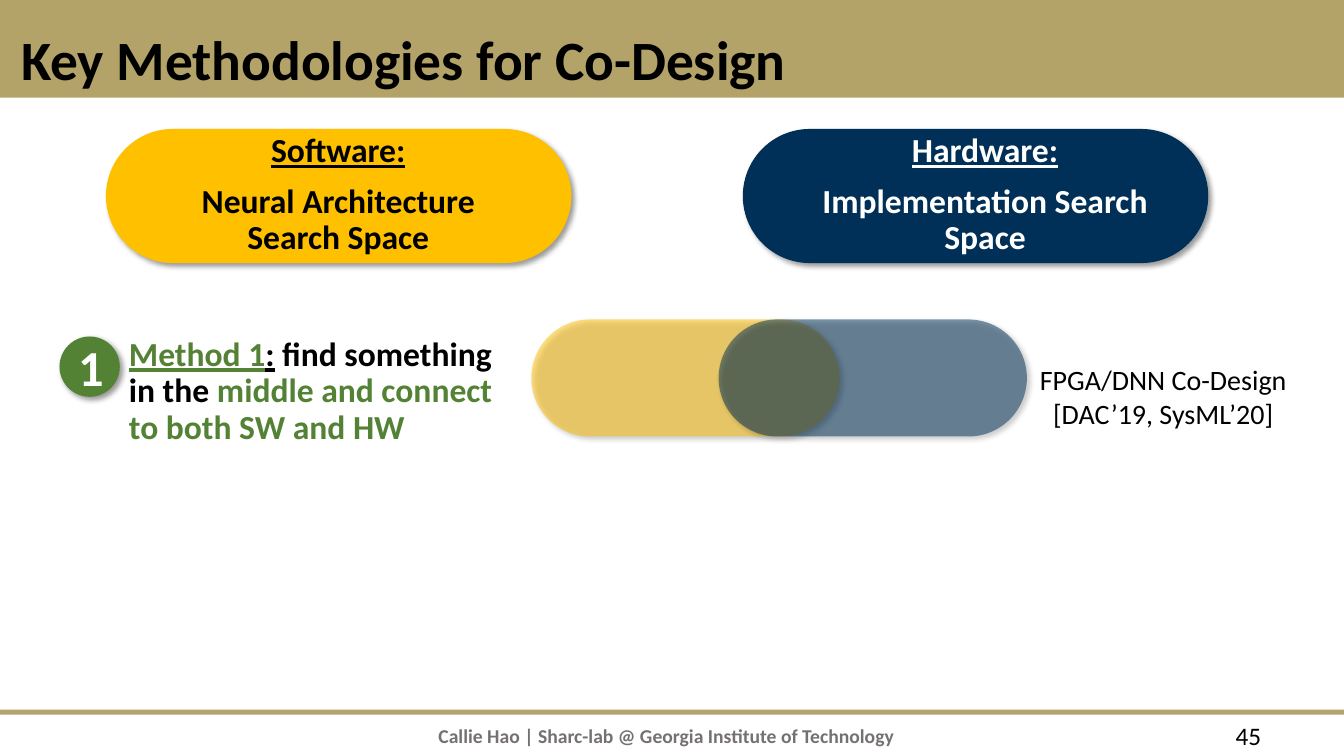
from pptx import Presentation
from pptx.dml.color import RGBColor
from pptx.enum.shapes import MSO_SHAPE
from pptx.enum.text import MSO_ANCHOR, PP_ALIGN
from pptx.oxml import parse_xml
from pptx.oxml.ns import nsdecls, qn
from pptx.util import Cm, Pt
from lxml.etree import SubElement

GOLD = RGBColor(0xB3, 0xA3, 0x69)
AMBER = RGBColor(0xFF, 0xC0, 0x00)
NAVY = RGBColor(0x00, 0x30, 0x57)
GREEN = RGBColor(0x54, 0x82, 0x35)
GRAY = RGBColor(0x76, 0x71, 0x71)
BLACK = RGBColor(0, 0, 0)
WHITE = RGBColor(255, 255, 255)
SHADOW = (f'<a:outerShdw {nsdecls("a")} blurRad="50800" dist="38100" '
          'dir="2700000" algn="tl" rotWithShape="0"><a:srgbClr val="000000">'
          '<a:alpha val="40000"/></a:srgbClr></a:outerShdw>')

deck = Presentation()
deck.slide_width, deck.slide_height = Cm(33.87), Cm(19.05)
slide = deck.slides.add_slide(deck.slide_layouts[5])
shapes = slide.shapes


def draw(kind, box, color, raised=True, alpha=None):
    """Add a borderless shape, with a soft shadow when raised."""
    shape = shapes.add_shape(kind, *map(Cm, box))
    shape.fill.solid()
    shape.fill.fore_color.rgb = color
    shape.line.fill.background()
    shape.shadow.inherit = False
    props = shape._element.spPr
    if raised:
        props.find(qn("a:effectLst")).append(parse_xml(SHADOW))
    if alpha:
        tint = props.find(qn("a:solidFill"))[0]
        SubElement(tint, qn("a:alpha")).set("val", str(alpha * 1000))
    if kind == MSO_SHAPE.ROUNDED_RECTANGLE:
        shape.adjustments[0] = 0.5
    return shape


def write(frame, paras, size, bold=True, align=PP_ALIGN.LEFT, space=0.9):
    """Fill a frame; each paragraph is a list of (text, color, underline)."""
    frame.word_wrap = True
    for i, runs in enumerate(paras):
        para = frame.add_paragraph() if i else frame.paragraphs[0]
        para.alignment = align
        para.line_spacing = space
        para.space_before = Pt(10 if i else 0)
        for text, color, line in runs:
            run = para.add_run()
            run.text = text
            font = run.font
            font.name, font.size, font.bold = "Calibri", Pt(size), bold
            font.color.rgb, font.underline = color, line


# Header band and footer rule
for top, high in ((0, 2.46), (17.88, 0.13)):
    draw(MSO_SHAPE.RECTANGLE, (0, top, 33.87, high), GOLD, raised=False)

# Title, brought in front of the band
title = shapes.title
title.left, title.top, title.width, title.height = map(Cm, (0.28, 0.71, 31.45, 1.73))
title.text_frame.vertical_anchor = MSO_ANCHOR.MIDDLE
write(title.text_frame, [[("Key Methodologies for Co-Design", BLACK, False)]], 39.6)
shapes._spTree.append(title._element)

# Footer text and page number
foot = shapes.add_textbox(Cm(10.8), Cm(18.11), Cm(12.98), Cm(0.84))
write(foot.text_frame, [[("Callie Hao | Sharc-lab @ Georgia Institute of Technology",
                          GRAY, False)]], 14, space=1)
page = shapes.add_textbox(Cm(30.89), Cm(18.03), Cm(1.98), Cm(0.84))
write(page.text_frame, [[("45", BLACK, False)]], 18, bold=False, space=1)

# Software and hardware pills with their captions
for left, fill, ink, text_left, wide, head, body in (
    (2.67, AMBER, BLACK, 4.32, 8.41, "Software:", "Neural Architecture Search Space"),
    (18.72, NAVY, WHITE, 19.91, 9.83, "Hardware:", "Implementation Search Space"),
):
    draw(MSO_SHAPE.ROUNDED_RECTANGLE, (left, 3.25, 11.73, 3.38), fill)
    label = shapes.add_textbox(Cm(text_left), Cm(3.25), Cm(wide), Cm(3.38))
    write(label.text_frame, [[(head, ink, True)], [(body, ink, False)]], 24,
          align=PP_ALIGN.CENTER)

# Overlapping search spaces
for left, fill in ((13.39, AMBER), (18.11, NAVY)):
    draw(MSO_SHAPE.ROUNDED_RECTANGLE, (left, 8.05, 7.77, 2.95), fill, alpha=50)

# Method description
method = shapes.add_textbox(Cm(3), Cm(8.38), Cm(9.96), Cm(3.02))
write(method.text_frame, [[
    ("Method 1", GREEN, True), (":", BLACK, True),
    (" find something in the ", BLACK, False),
    ("middle and connect to both SW and HW", GREEN, False),
]], 24)

# Papers
cite = shapes.add_textbox(Cm(25.43), Cm(9.02), Cm(7.77), Cm(1.96))
write(cite.text_frame, [[("FPGA/DNN Co-Design [DAC’19, SysML’20]", BLACK, False)]],
      20, bold=False, align=PP_ALIGN.CENTER, space=1)

# Number badge
badge = draw(MSO_SHAPE.OVAL, (1.5, 8.48, 1.52, 1.52), GREEN)
badge.text_frame.vertical_anchor = MSO_ANCHOR.MIDDLE
write(badge.text_frame, [[("1", WHITE, False)]], 36, align=PP_ALIGN.CENTER, space=1)

deck.save("out.pptx")
